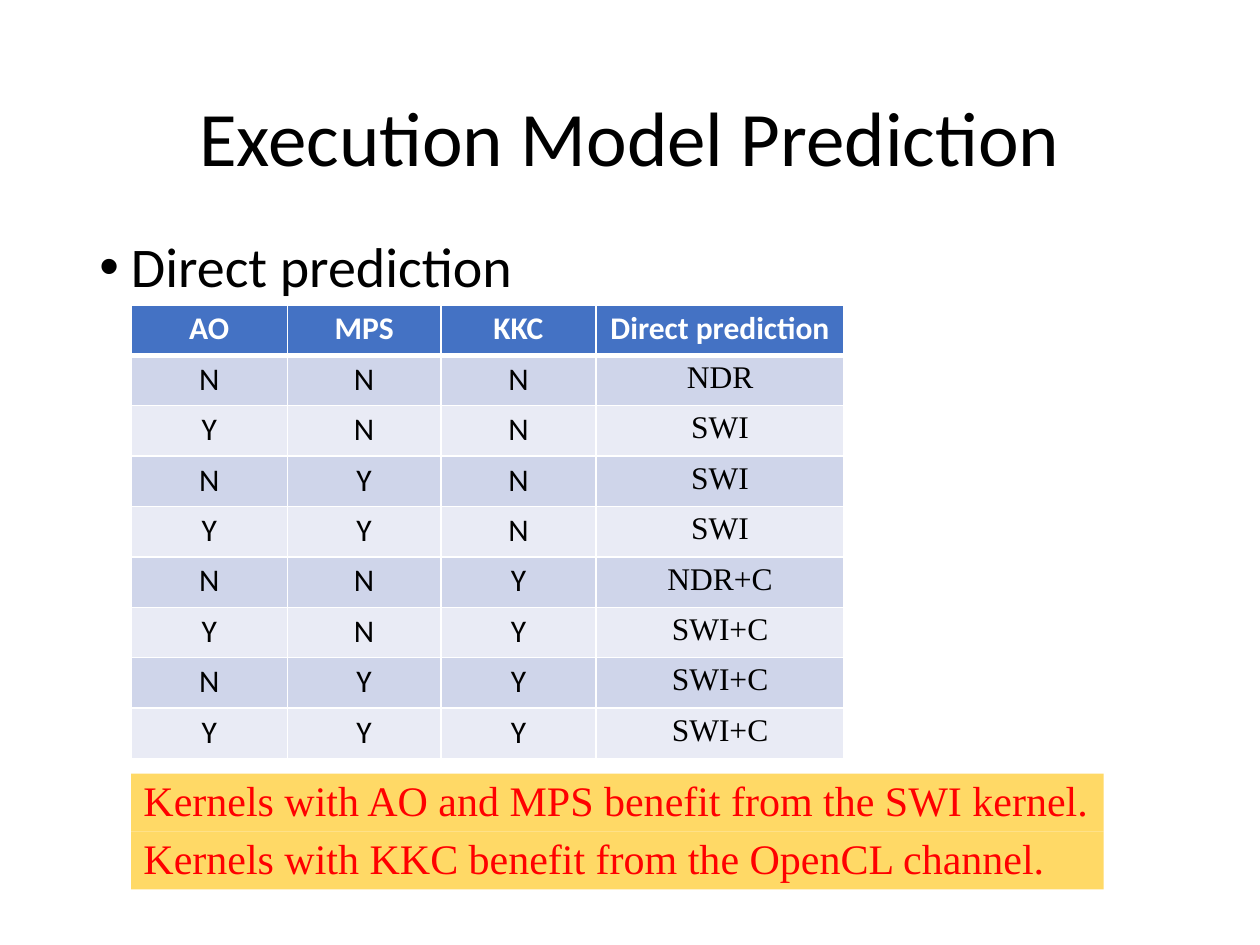
from lxml.etree import SubElement as Sub
from pptx import Presentation
from pptx.dml.color import RGBColor
from pptx.enum.shapes import MSO_SHAPE as Shape
from pptx.enum.text import MSO_ANCHOR as Anchor, PP_ALIGN as Align
from pptx.oxml.ns import qn
from pptx.util import Inches, Pt

WIDE, HIGH = 10, 7.5
LEFT = 1.04
ROW = 0.4
SERIF = "Times New Roman"
FLAGS = ["AO", "MPS", "KKC"]
CASES = ["NNN", "YNN", "NYN", "YYN", "NNY", "YNY", "NYY", "YYY"]
MODELS = ["NDR", "SWI", "SWI", "SWI", "NDR+C", "SWI+C", "SWI+C", "SWI+C"]
NOTES = ["Kernels with AO and MPS benefit from the SWI kernel.",
         "Kernels with KKC benefit from the OpenCL channel."]


def color(code):
    return RGBColor.from_string(code)


def paint(item, code):
    item.fill.solid()
    item.fill.fore_color.rgb = color(code)


def write(frame, text, size=18, font="Calibri", ink="000000", bold=False,
          align=Align.LEFT, line=None, before=0):
    para = frame.paragraphs[0]
    para.alignment, para.line_spacing = align, line
    para.space_before = Pt(before)
    run = para.add_run()
    run.text = text
    face = run.font
    face.size, face.name, face.bold = Pt(size), font, bold
    face.color.rgb = color(ink)
    return para


def add_text(slide, box, text, anchor=Anchor.TOP, **style):
    frame = slide.shapes.add_textbox(*map(Inches, box)).text_frame
    frame.word_wrap, frame.vertical_anchor = True, anchor
    return write(frame, text, line=0.9, **style)


def add_bullet(para, indent):
    props = para._p.get_or_add_pPr()
    props.set("marL", str(Inches(indent)))
    props.set("indent", str(-Inches(indent)))
    Sub(props, qn("a:buFont"), typeface="Arial")
    Sub(props, qn("a:buChar"), char="•")


def add_edges(cell, below):
    """Draw white cell borders, with the lower one as wide as given."""
    props = cell._tc.get_or_add_tcPr()
    for spot, (side, width) in enumerate(
            [("L", 1), ("R", 1), ("T", 1), ("B", below)]):
        edge = Sub(props, qn("a:ln" + side), w=str(Pt(width)))
        fill = Sub(edge, qn("a:solidFill"))
        Sub(fill, qn("a:srgbClr"), val="FFFFFF")
        props.insert(spot, edge)


def add_grid(slide, left, top, widths, rows, font):
    box = left, top, sum(widths), ROW * len(rows)
    table = slide.shapes.add_table(
        len(rows), len(widths), *map(Inches, box)).table
    for col, width in zip(table.columns, widths):
        col.width = Inches(width)
    for r, row in enumerate(rows):
        table.rows[r].height = Inches(ROW)
        head = r == 0
        for c, text in enumerate(row):
            cell = table.cell(r, c)
            cell.margin_top = cell.margin_bottom = Inches(0.04)
            paint(cell, "4472C4" if head else ("E9EBF5", "CFD5EA")[r % 2])
            add_edges(cell, 3 if head else 1)
            write(cell.text_frame, text, font="Calibri" if head else font,
                  ink="FFFFFF" if head else "000000", bold=head,
                  align=Align.CENTER)


def add_notes(slide, left, top, width, height):
    """Stack the notes in equal bands."""
    band = height / len(NOTES)
    for i, note in enumerate(NOTES):
        box = left, top + i * band, width, band
        shape = slide.shapes.add_shape(Shape.RECTANGLE, *map(Inches, box))
        shape.shadow.inherit = False
        shape.line.fill.background()
        paint(shape, "FFD966")
        frame = shape.text_frame
        frame.word_wrap, frame.vertical_anchor = True, Anchor.TOP
        write(frame, note, size=24, font=SERIF, ink="FF0000",
              line=0.9, before=10)


def main():
    deck = Presentation()
    deck.slide_width, deck.slide_height = Inches(WIDE), Inches(HIGH)
    slide = deck.slides.add_slide(deck.slide_layouts[6])
    side = 0.069 * WIDE
    body = WIDE - 2 * side
    add_text(slide, (side, 0.4, body, 1.45), "Execution Model Prediction",
             anchor=Anchor.MIDDLE, size=44, align=Align.CENTER)
    para = add_text(slide, (side, 1.85, body, 4.93), "Direct prediction",
                    size=32, before=10)
    add_bullet(para, 0.25)
    add_notes(slide, LEFT, 6.14, 7.72, 0.92)
    widths = [1.24, 1.22, 1.23]
    add_grid(slide, LEFT, 2.42, widths, [FLAGS, *CASES], "Calibri")
    models = [[name] for name in ["Direct prediction", *MODELS]]
    add_grid(slide, LEFT + sum(widths), 2.42, [1.97], models, SERIF)
    deck.save("out.pptx")


if __name__ == "__main__":
    main()
